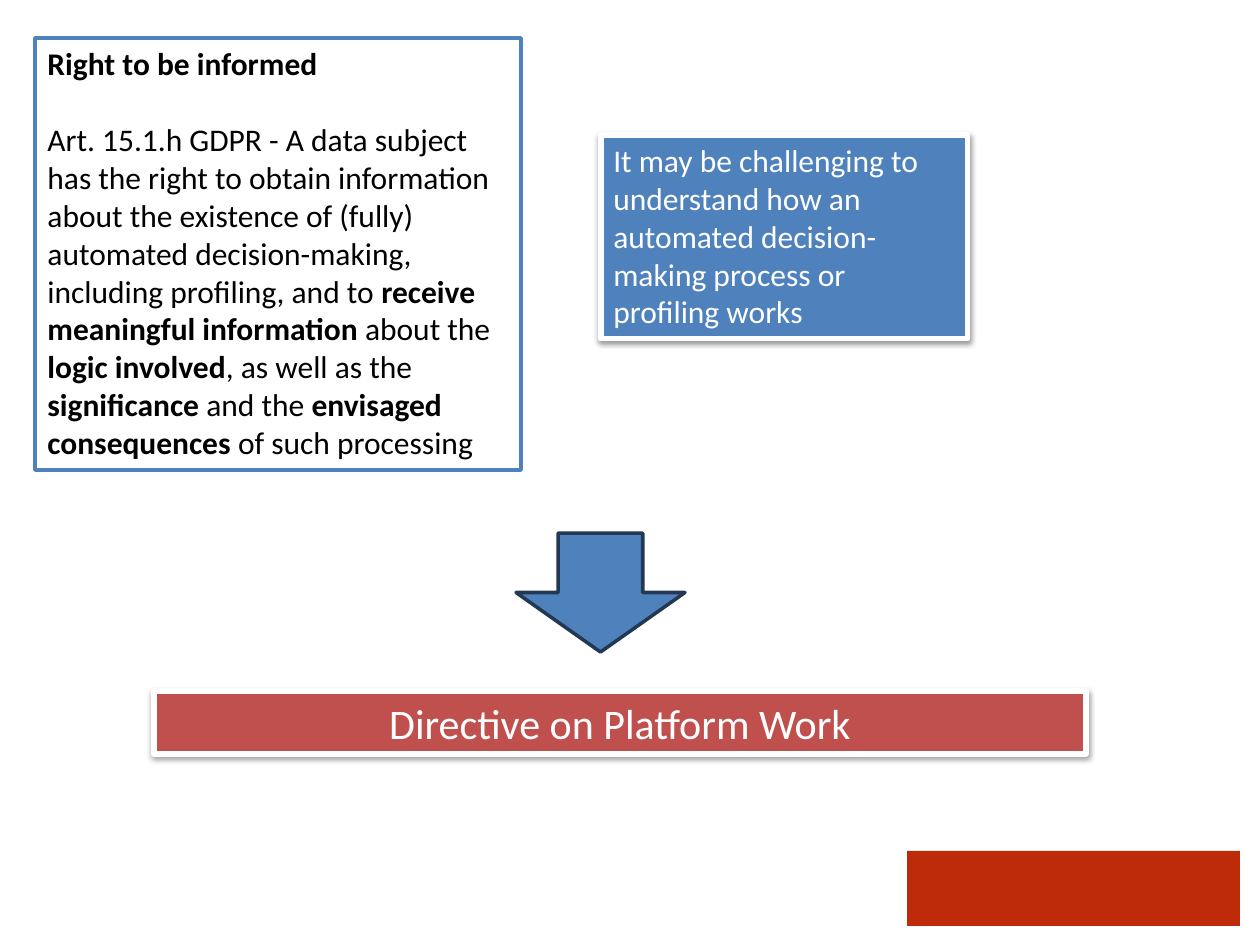
from dataclasses import dataclass
from typing import Optional

import lxml.etree
import pptx
import pptx.dml.color
import pptx.enum.shapes
import pptx.enum.text
import pptx.oxml.ns
import pptx.util

PX_PER_INCH = 126
SHAPES = pptx.enum.shapes.MSO_SHAPE
ALIGN = pptx.enum.text.PP_ALIGN


@dataclass(frozen=True)
class Theme:
    font: str = "Calibri"
    body_size: int = 18
    headline_size: int = 24
    paragraph_gap: int = 22
    black: str = "000000"
    white: str = "FFFFFF"
    blue: str = "4F81BD"
    navy: str = "233953"
    red: str = "C0504D"
    footer_red: str = "BD2B0B"


THEME = Theme()


@dataclass(frozen=True)
class Phrase:
    text: str
    bold: bool = False


@dataclass(frozen=True)
class Block:
    left: int
    top: int
    width: int
    height: int
    fill: str
    line: Optional[str] = None
    line_width: int = 2
    preset: int = SHAPES.RECTANGLE
    shadowed: bool = False
    paragraphs: tuple[tuple[Phrase, ...], ...] = ()
    color: str = THEME.white
    size: int = THEME.body_size
    align: int = ALIGN.LEFT


RIGHT_TO_BE_INFORMED = (
    (Phrase("Right to be informed", True),),
    (
        Phrase("Art. 15.1.h GDPR - A data subject has the right to obtain information "
               "about the existence of (fully) automated decision-making, including "
               "profiling, and to "),
        Phrase("receive meaningful information ", True),
        Phrase("about the "),
        Phrase("logic involved", True),
        Phrase(", as well as the "),
        Phrase("significance ", True),
        Phrase("and the "),
        Phrase("envisaged consequences ", True),
        Phrase("of such processing"),
    ),
)
CHALLENGE = ((Phrase("It may be challenging to understand how an automated "
                     "decision-making process or profiling works"),),)
DIRECTIVE = ((Phrase("Directive on Platform Work"),),)

BLOCKS = (
    Block(907, 851, 333, 75, THEME.footer_red),
    Block(35, 38, 486, 432, THEME.white, THEME.blue,
          paragraphs=RIGHT_TO_BE_INFORMED, color=THEME.black),
    Block(601, 135, 367, 204, THEME.blue, THEME.white, 3, shadowed=True,
          paragraphs=CHALLENGE),
    Block(154, 691, 932, 63, THEME.red, THEME.white, 3, shadowed=True,
          paragraphs=DIRECTIVE, size=THEME.headline_size, align=ALIGN.CENTER),
    Block(516, 533, 169, 119, THEME.blue, THEME.navy, preset=SHAPES.DOWN_ARROW),
)


def px(length: int) -> pptx.util.Emu:
    return pptx.util.Emu(round(length * 914400 / PX_PER_INCH))


def rgb(color: str) -> pptx.dml.color.RGBColor:
    return pptx.dml.color.RGBColor.from_string(color)


def add_shadow(shape) -> None:
    qn = pptx.oxml.ns.qn
    effects = shape.element.spPr.find(qn("a:effectLst"))
    shadow = lxml.etree.SubElement(
        effects, qn("a:outerShdw"), blurRad="40000", dist="20000",
        dir="5400000", rotWithShape="0")
    tint = lxml.etree.SubElement(shadow, qn("a:srgbClr"), val=THEME.black)
    lxml.etree.SubElement(tint, qn("a:alpha"), val="38000")


def write_text(shape, block: Block) -> None:
    frame = shape.text_frame
    frame.word_wrap = True
    frame.auto_size = pptx.enum.text.MSO_AUTO_SIZE.SHAPE_TO_FIT_TEXT
    frame.vertical_anchor = pptx.enum.text.MSO_ANCHOR.TOP
    for index, phrases in enumerate(block.paragraphs):
        paragraph = frame.add_paragraph() if index else frame.paragraphs[0]
        paragraph.alignment = block.align
        if index:
            paragraph.space_before = pptx.util.Pt(THEME.paragraph_gap)
        for phrase in phrases:
            run = paragraph.add_run()
            run.text = phrase.text
            run.font.name = THEME.font
            run.font.size = pptx.util.Pt(block.size)
            run.font.bold = phrase.bold
            run.font.color.rgb = rgb(block.color)


def draw_block(slide, block: Block) -> None:
    shape = slide.shapes.add_shape(
        block.preset, px(block.left), px(block.top), px(block.width), px(block.height))
    shape.fill.solid()
    shape.fill.fore_color.rgb = rgb(block.fill)
    if block.line:
        shape.line.color.rgb = rgb(block.line)
        shape.line.width = pptx.util.Pt(block.line_width)
    else:
        shape.line.fill.background()
    shape.shadow.inherit = False
    if block.shadowed:
        add_shadow(shape)
    if block.paragraphs:
        write_text(shape, block)


def main() -> None:
    deck = pptx.Presentation()
    deck.slide_width = px(1260)
    deck.slide_height = px(945)
    slide = deck.slides.add_slide(deck.slide_layouts[6])
    for block in BLOCKS:
        draw_block(slide, block)
    deck.save("out.pptx")


if __name__ == "__main__":
    main()
